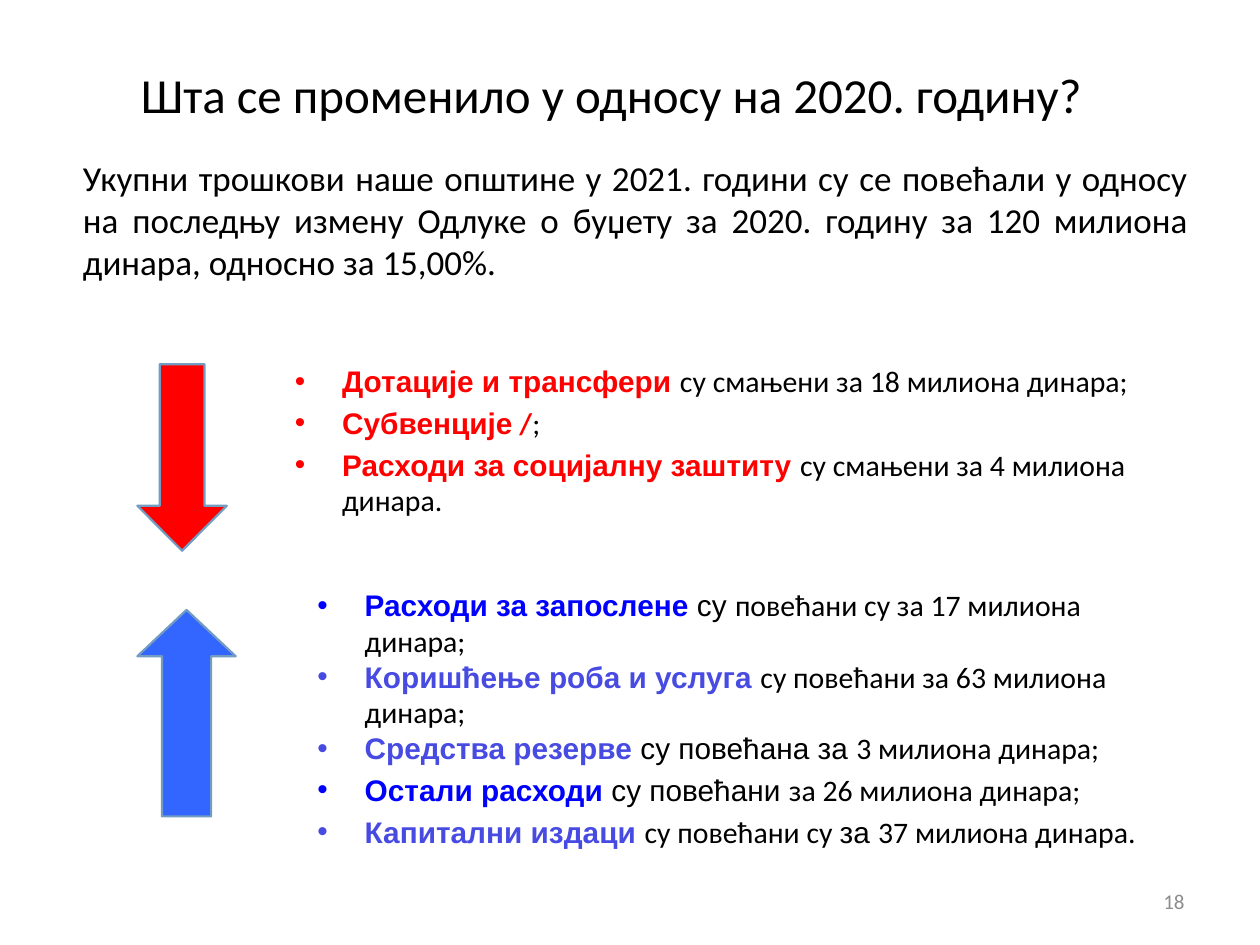
from lxml import etree
from pptx import Presentation
from pptx.dml.color import RGBColor
from pptx.enum.shapes import MSO_SHAPE
from pptx.enum.text import MSO_ANCHOR, MSO_AUTO_SIZE, PP_ALIGN
from pptx.oxml.ns import qn
from pptx.util import Pt

DOWN, UP = MSO_SHAPE.DOWN_ARROW, MSO_SHAPE.UP_ARROW
TOP, MIDDLE = MSO_ANCHOR.TOP, MSO_ANCHOR.MIDDLE
NO_FIT = MSO_AUTO_SIZE.NONE
LEFT, CENTER = PP_ALIGN.LEFT, PP_ALIGN.CENTER
RIGHT, JUSTIFY = PP_ALIGN.RIGHT, PP_ALIGN.JUSTIFY

BLACK = RGBColor(0x00, 0x00, 0x00)
GRAY = RGBColor(0x8C, 0x8C, 0x8C)
RED = RGBColor(0xFF, 0x00, 0x00)
BLUE = RGBColor(0x00, 0x00, 0xFF)
VIOLET = RGBColor(0x47, 0x4B, 0xE1)
ARROW_BLUE = RGBColor(0x33, 0x66, 0xFF)
OUTLINE = RGBColor(0x73, 0x9C, 0xC3)

LIST_SIZE = 17
INDENT = 27

# Each item is a list of runs: text, font, colour; coloured runs are bold
DECREASES = [
    [("Дотације и трансфери ", "Arial", RED),
     ("су смањени за 18 милиона динара;", "Calibri", BLACK)],
    [("Субвенције", "Arial", RED), (" /", "Calibri", RED),
     (";", "Calibri", BLACK)],
    [("Расходи за социјалну заштиту ", "Arial", RED),
     ("су смањени за 4 милиона динара.", "Calibri", BLACK)],
]
INCREASES = [
    [("Расходи за запослене ", "Arial", BLUE), ("су ", "Arial", BLACK),
     ("повећани су за 17 милиона динара;", "Calibri", BLACK)],
    [("Коришћење роба и услуга ", "Arial", VIOLET),
     ("су повећани за 63 милиона динара;", "Calibri", BLACK)],
    [("Средства резерве ", "Arial", VIOLET),
     ("су повећана за ", "Arial", BLACK),
     ("3 милиона динара;", "Calibri", BLACK)],
    [("Остали расходи ", "Arial", BLUE), ("су повећани ", "Arial", BLACK),
     ("за 26 милиона динара;", "Calibri", BLACK)],
    [("Капитални издаци ", "Arial", VIOLET),
     ("су повећани су ", "Calibri", BLACK), ("за ", "Arial", BLACK),
     ("37 милиона динара.", "Calibri", BLACK)],
]


def add_text(p, text, font="Calibri", size=LIST_SIZE, color=BLACK, bold=False):
    r = p.add_run()
    r.text = text
    r.font.name, r.font.size, r.font.bold = font, Pt(size), bold
    r.font.color.rgb = color


def format_paragraph(p, align=LEFT, before=0, indent=0, bullet=False):
    p.alignment = align
    p.space_before, p.space_after, p.line_spacing = Pt(before), Pt(0), 1.0
    pPr = p._p.get_or_add_pPr()
    pPr.set("marL", str(Pt(indent)))
    pPr.set("indent", str(Pt(-indent if bullet else 0)))
    if bullet:
        etree.SubElement(pPr, qn("a:buFont")).set("typeface", "Arial")
        etree.SubElement(pPr, qn("a:buChar")).set("char", "•")
    else:
        etree.SubElement(pPr, qn("a:buNone"))


def place(sp, box, anchor=TOP):
    sp.left, sp.top, sp.width, sp.height = map(Pt, box)
    tf = sp.text_frame
    tf.word_wrap, tf.auto_size, tf.vertical_anchor = True, NO_FIT, anchor
    return tf


def fill_line(sp, box, text, size, align, anchor=TOP, color=BLACK, **spacing):
    p = place(sp, box, anchor).paragraphs[0]
    format_paragraph(p, align, **spacing)
    add_text(p, text, size=size, color=color)


def fill_list(sp, box, items, tight=0):
    """The first `tight` items have no space above them."""
    tf = place(sp, box)
    for i, runs in enumerate(items):
        p = tf.add_paragraph() if i else tf.paragraphs[0]
        before = 0 if i < tight else LIST_SIZE * 0.2
        format_paragraph(p, before=before, indent=INDENT, bullet=True)
        for text, font, color in runs:
            add_text(p, text, font=font, color=color, bold=color != BLACK)


def add_arrow(s, kind, box, color, head):
    sp = s.shapes.add_shape(kind, *map(Pt, box))
    sp.adjustments[0], sp.adjustments[1] = 0.5, head
    sp.shadow.inherit = False
    sp.fill.solid()
    sp.fill.fore_color.rgb = color
    sp.line.color.rgb = OUTLINE
    sp.line.width = Pt(1.25)


def add_text_box(s):
    return s.shapes.add_textbox(0, 0, 0, 0)


def build_header(s, x, y):
    fill_line(s.shapes.title, (x, y, 648, 65.5),
              "Шта се променило у односу на 2020. годину?",
              28, CENTER, MIDDLE)
    fill_line(s.placeholders[1], (x + 13, y + 64.8, 648, 89.3),
              "Укупни трошкови наше општине у 2021. години су се повећали "
              "у односу на последњу измену Одлуке о буџету за 2020. годину "
              "за 120 милиона динара, односно за 15,00%.",
              20, JUSTIFY, before=4, indent=2)


def build_decreases(s, x, y):
    fill_list(s.placeholders[2], (x + 82.8, y, 539.3, 116), DECREASES)
    add_arrow(s, DOWN, (x, y + 4.3, 51.1, 106.6), RED, 0.503)


def build_increases(s, x, y):
    fill_list(add_text_box(s), (x + 95.8, y, 483.8, 157.7), INCREASES, tight=3)
    add_arrow(s, UP, (x, y + 16.6, 56.2, 118), ARROW_BLUE, 0.472)


def main():
    prs = Presentation()
    prs.slide_width, prs.slide_height = Pt(720), Pt(540)
    s = prs.slides.add_slide(prs.slide_layouts[3])
    build_header(s, 25.2, 20.9)
    build_decreases(s, 78.5, 203.8)
    build_increases(s, 78.5, 331.9)
    # Page number
    fill_line(add_text_box(s), (516, 500.5, 168, 28.8), "18",
              12, RIGHT, MIDDLE, GRAY)
    prs.save("out.pptx")


if __name__ == "__main__":
    main()
